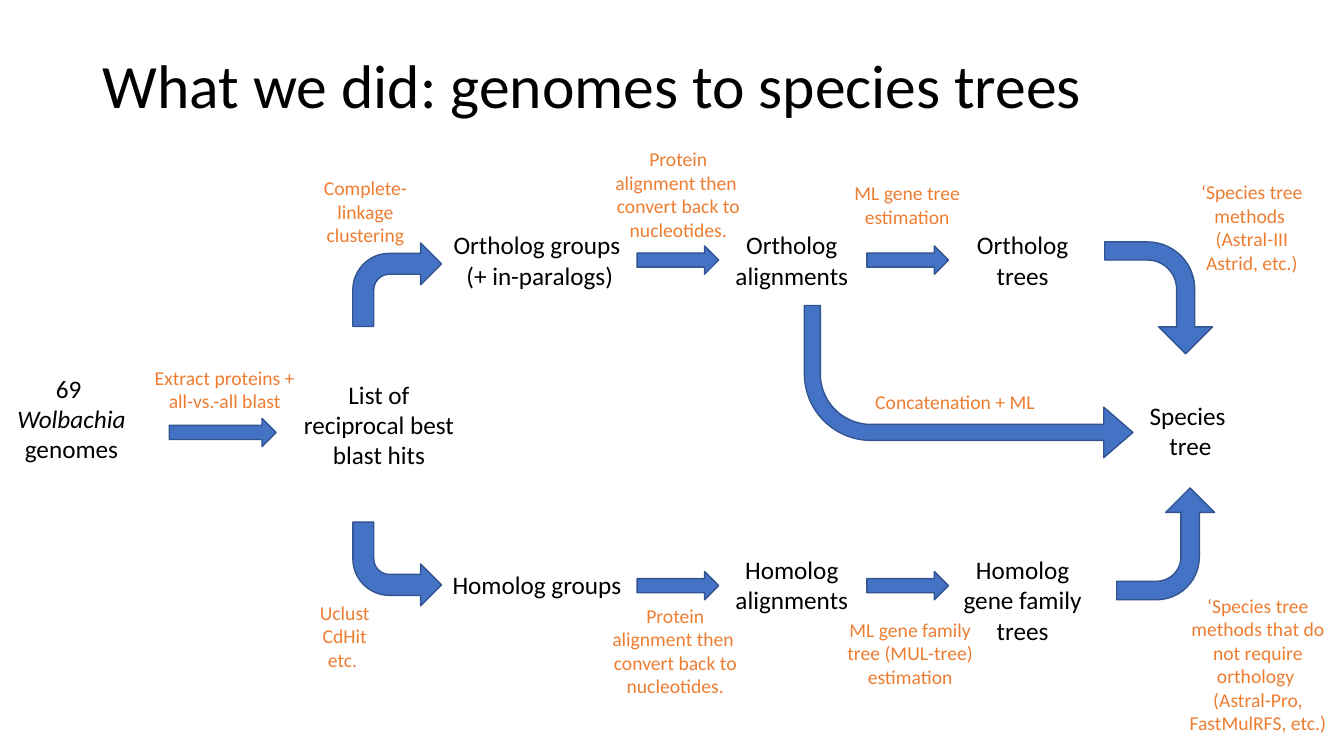
from pptx import Presentation
from pptx.dml.color import RGBColor
from pptx.enum.shapes import MSO_SHAPE
from pptx.enum.text import MSO_ANCHOR, MSO_AUTO_SIZE, PP_ALIGN
from pptx.util import Pt

PX = 9144  # 100 px to the inch
RIGHT, BENT = MSO_SHAPE.RIGHT_ARROW, MSO_SHAPE.BENT_ARROW
CENTER, LEFT = PP_ALIGN.CENTER, PP_ALIGN.LEFT
MIDDLE = MSO_ANCHOR.MIDDLE
GROW, FIXED = MSO_AUTO_SIZE.SHAPE_TO_FIT_TEXT, MSO_AUTO_SIZE.NONE
FONT = "Calibri"
COLORS = {"stage": "000000", "method": "ED7D31", "arrow": "4472C4", "edge": "325491"}
SIZES = {"stage": 18, "method": 14}

deck = Presentation()
deck.slide_width, deck.slide_height = 12192000, 6858000
page = deck.slides.add_slide(deck.slide_layouts[5])


def add_arrow(kind, at, turn=0, flip=False, adjust=()):
    arrow = page.shapes.add_shape(kind, *[n * PX for n in at])
    arrow.shadow.inherit = False
    arrow.fill.solid()
    arrow.fill.fore_color.rgb = RGBColor.from_string(COLORS["arrow"])
    arrow.line.color.rgb = RGBColor.from_string(COLORS["edge"])
    arrow.line.width = Pt(1)
    arrow.rotation = turn
    if flip:
        arrow._element.spPr.get_or_add_xfrm().set("flipH", "1")
    for i, value in enumerate(adjust):
        arrow.adjustments[i] = value


def add_label(role, at, *paragraphs):
    """Each paragraph is a list of (text, italic) spans or a plain string."""
    box = page.shapes.add_textbox(*[n * PX for n in at])
    frame = box.text_frame
    frame.word_wrap = True
    frame.auto_size = GROW
    for i, content in enumerate(paragraphs):
        para = frame.add_paragraph() if i else frame.paragraphs[0]
        if isinstance(content, str):
            para.text = content
        else:
            for text, italic in content:
                if text == "\n":
                    para.add_line_break()
                    continue
                span = para.add_run()
                span.text = text
                span.font.italic = italic
        para.alignment = CENTER
        para.font.name = FONT
        para.font.size = Pt(SIZES[role])
        para.font.color.rgb = RGBColor.from_string(COLORS[role])


# Title
title = page.shapes.title
title.left, title.top, title.width, title.height = [n * PX for n in (92, 15, 1150, 145)]
title.text_frame.text = "What we did: genomes to species trees"
title.text_frame.word_wrap = True
title.text_frame.auto_size = FIXED
title.text_frame.vertical_anchor = MIDDLE
heading = title.text_frame.paragraphs[0]
heading.alignment = LEFT
heading.line_spacing = 0.9
heading.font.name = FONT
heading.font.size = Pt(44)
heading.font.color.rgb = RGBColor.from_string(COLORS["stage"])

# Straight arrows: from the genomes, then two in each branch
add_arrow(RIGHT, (168, 415, 106, 28))
for top in (244, 567):
    for left in (632, 860):
        add_arrow(RIGHT, (left, top, 81, 28))

# Bent arrows: into the branches, then into the species tree
add_arrow(BENT, (350, 241, 88, 83))
add_arrow(BENT, (350, 518, 88, 83), 180, True)
add_arrow(BENT, (1094, 242, 111, 107), 90, False, (0.168, 0.25, 0.25, 0.438))
add_arrow(BENT, (1101, 491, 111, 97), 90, True, (0.189, 0.25, 0.25, 0.438))
add_arrow(BENT, (798, 303, 326, 151), 180, True, (0.105, 0.166, 0.192, 0.438))

# Stages of the analysis
add_label("stage", (6, 365, 130, 101),
          [("69 ", False), ("\n", False), ("Wolbachia", True), (" genomes", False)])
for at, text in [
    ((288, 371, 176, 101), "List of reciprocal best blast hits"),
    ((438, 223, 195, 71), "Ortholog groups \n(+ in-paralogs)"),
    ((438, 560, 195, 40), "Homolog groups "),
    ((711, 223, 149, 71), "Ortholog alignments"),
    ((711, 545, 149, 71), "Homolog alignments"),
    ((940, 223, 149, 71), "Ortholog trees"),
    ((940, 545, 149, 101), "Homolog gene family trees"),
    ((1129, 392, 104, 71), "Species \ntree"),
]:
    add_label("stage", at, text)

# Methods beside the arrows
for at, text in [
    ((143, 358, 160, 57), "Extract proteins + all-vs.-all blast"),
    ((304, 170, 117, 81), "Complete-linkage clustering"),
    ((298, 591, 88, 81), "Uclust\nCdHit\netc. "),
    ((820, 175, 160, 57), "ML gene tree estimation"),
    ((823, 608, 160, 81), "ML gene family tree (MUL-tree) estimation"),
    ((858, 382, 179, 34), "Concatenation + ML"),
    ((1168, 584, 160, 151),
     "‘Species tree methods that do not require orthology \n(Astral-Pro, FastMulRFS, etc.)"),
]:
    add_label("method", at, text)
for left, top in ((593, 141), (590, 594)):
    add_label("method", (left, top, 160, 104),
              "Protein alignment then \nconvert back to nucleotides.")
add_label("method", (1162, 174, 160, 104),
          "‘Species tree methods ", "(Astral-III\nAstrid, etc.)")

deck.save("out.pptx")
